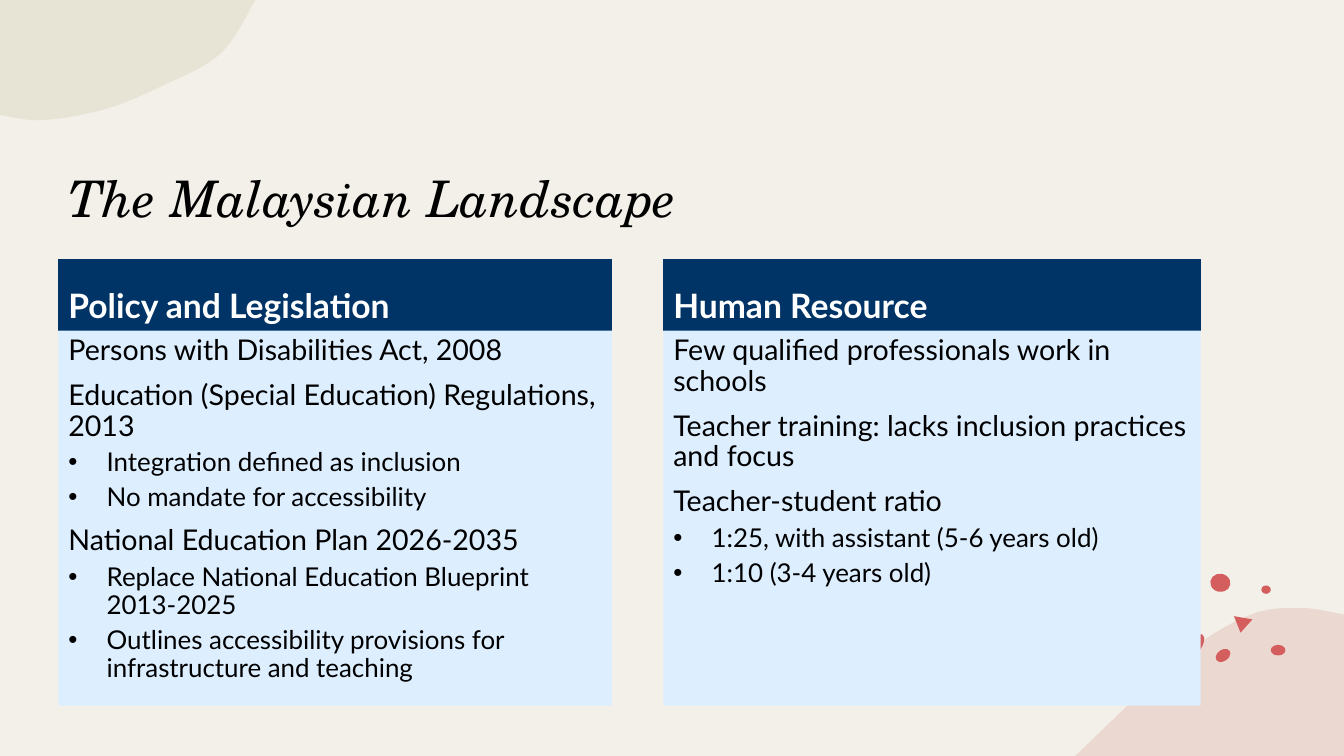
import lxml.etree
import pptx
import pptx.dml.color
import pptx.enum.shapes
import pptx.enum.text
import pptx.oxml.ns
import pptx.util

COLORS = {
    "background": "F3F0E9", "rose": "E5C4BA", "olive": "DCD9C3", "coral": "D45E5E",
    "navy": "003366", "sky": "DDEEFF", "black": "000000", "white": "FFFFFF",
}
CURVE_STEPS = 12

presentation = pptx.Presentation()
presentation.slide_width = pptx.util.Inches(13.33)
presentation.slide_height = pptx.util.Inches(7.5)
column = presentation.slide_width / 100
row = presentation.slide_height / 100
slide = presentation.slides.add_slide(presentation.slide_layouts[6])
slide.background.fill.solid()
slide.background.fill.fore_color.rgb = pptx.dml.color.RGBColor.from_string(COLORS["background"])


def paint(shape, color):
    shape.shadow.inherit = False
    shape.line.fill.background()
    shape.fill.solid()
    shape.fill.fore_color.rgb = pptx.dml.color.RGBColor.from_string(COLORS[color])


def format_text(paragraph, font_name, size, color, bold=False, italic=False):
    paragraph.alignment = pptx.enum.text.PP_ALIGN.LEFT
    for run in paragraph.runs:
        run.font.name = font_name
        run.font.size = pptx.util.Pt(size)
        run.font.bold = bold
        run.font.italic = italic
        run.font.color.rgb = pptx.dml.color.RGBColor.from_string(COLORS[color])


corner_blobs = [
    ("rose", (100, 100), [(80, 100), (87.7, 87.2), (92.8, 81.5), (96.6, 80.4), (100, 81.3)]),
    ("olive", (0, 0), [(19, 0), (16.4, 7.1), (11.9, 11.5), (7.7, 14.5), (3.1, 15.9), (0, 15.2)]),
]
for color, corner, knots in corner_blobs:
    padded = [knots[0], *knots, knots[-1]]
    outline = [corner, knots[0]]
    for before, start, end, after in zip(padded, padded[1:], padded[2:], padded[3:]):
        for step in range(1, CURVE_STEPS + 1):
            t = step / CURVE_STEPS
            outline.append(tuple(
                b + t * (c - a + t * (2 * a - 5 * b + 4 * c - d + t * (3 * b - 3 * c + d - a))) / 2
                for a, b, c, d in zip(before, start, end, after)
                for b, c in [(b, c)]))
    points = [(x * column, y * row) for x, y in outline]
    builder = slide.shapes.build_freeform(*points[0], scale=1.0)
    builder.add_line_segments(points[1:], close=True)
    blob = builder.convert_to_shape()
    paint(blob, color)
    color_element = blob._element.spPr.find(".//" + pptx.oxml.ns.qn("a:srgbClr"))
    lxml.etree.SubElement(color_element, pptx.oxml.ns.qn("a:alpha")).set("val", "50000")

oval = pptx.enum.shapes.MSO_SHAPE.OVAL
wedge = pptx.enum.shapes.MSO_SHAPE.FLOWCHART_MERGE
speckles = [
    (oval, 91, 86.7, 1.2, 1.5, -35),
    (oval, 89, 85.3, 0.9, 3.2, 30),
    (oval, 95.1, 86, 1.1, 1.4, 0),
    (oval, 90.8, 77.1, 1.5, 2.4, 10),
    (oval, 94.2, 78, 0.7, 1.1, 0),
    (wedge, 92.4, 82.7, 1.4, 2, 10),
]
for kind, center_x, center_y, width, height, angle in speckles:
    speckle = slide.shapes.add_shape(
        kind, int((center_x - width / 2) * column), int((center_y - height / 2) * row),
        int(width * column), int(height * row))
    speckle.rotation = angle
    paint(speckle, "coral")

title = slide.shapes.add_textbox(
    int(4.35 * column), int(11.47 * row), int(82.67 * column), int(19.33 * row))
title.text_frame.word_wrap = True
title.text_frame.vertical_anchor = pptx.enum.text.MSO_ANCHOR.BOTTOM
title.text_frame.text = "The Malaysian Landscape"
format_text(title.text_frame.paragraphs[0], "TeX Gyre Schola", 36, "black", italic=True)

panels = [
    (4.35, 41.18, "Policy and Legislation", [
        ("Persons with Disabilities Act, 2008", []),
        ("Education (Special Education) Regulations, 2013", [
            "Integration defined as inclusion", "No mandate for accessibility"]),
        ("National Education Plan 2026-2035", [
            "Replace National Education Blueprint 2013-2025",
            "Outlines accessibility provisions for infrastructure and teaching"])]),
    (49.36, 39.98, "Human Resource", [
        ("Few qualified professionals work in schools", []),
        ("Teacher training: lacks inclusion practices and focus", []),
        ("Teacher-student ratio", [
            "1:25, with assistant (5-6 years old)", "1:10 (3-4 years old)"])]),
]
for left, width, heading, topics in panels:
    boxes = []
    for top, height, fill in ((34.27, 9.46, "navy"), (43.73, 49.6, "sky")):
        box = slide.shapes.add_shape(
            pptx.enum.shapes.MSO_SHAPE.RECTANGLE,
            int(left * column), int(top * row), int(width * column), int(height * row))
        paint(box, fill)
        box.text_frame.word_wrap = True
        boxes.append(box)

    header, body = boxes
    header.line.color.rgb = pptx.dml.color.RGBColor.from_string(COLORS["navy"])
    header.line.width = pptx.util.Pt(0.75)
    header.text_frame.vertical_anchor = pptx.enum.text.MSO_ANCHOR.BOTTOM
    header.text_frame.text = heading
    header.text_frame.paragraphs[0].line_spacing = 1.1
    format_text(header.text_frame.paragraphs[0], "Lato", 24, "white", bold=True)

    body.text_frame.vertical_anchor = pptx.enum.text.MSO_ANCHOR.TOP
    lines = []
    for topic, details in topics:
        lines.append((topic, 0))
        lines.extend((detail, 1) for detail in details)
    for index, (text, level) in enumerate(lines):
        paragraph = body.text_frame.add_paragraph() if index else body.text_frame.paragraphs[0]
        paragraph.text = text
        paragraph.level = level
        if level:
            properties = paragraph._p.get_or_add_pPr()
            properties.set("marL", str(pptx.util.Inches(0.38)))
            properties.set("indent", str(-pptx.util.Inches(0.38)))
            bullet_font = lxml.etree.SubElement(properties, pptx.oxml.ns.qn("a:buFont"))
            bullet_font.set("typeface", "Arial")
            bullet = lxml.etree.SubElement(properties, pptx.oxml.ns.qn("a:buChar"))
            bullet.set("char", "•")
        paragraph.line_spacing = 0.9
        if index:
            paragraph.space_before = pptx.util.Pt(5 if level else 10)
        format_text(paragraph, "Lato", 18.5 if level else 20.4, "black")

presentation.save("out.pptx")
